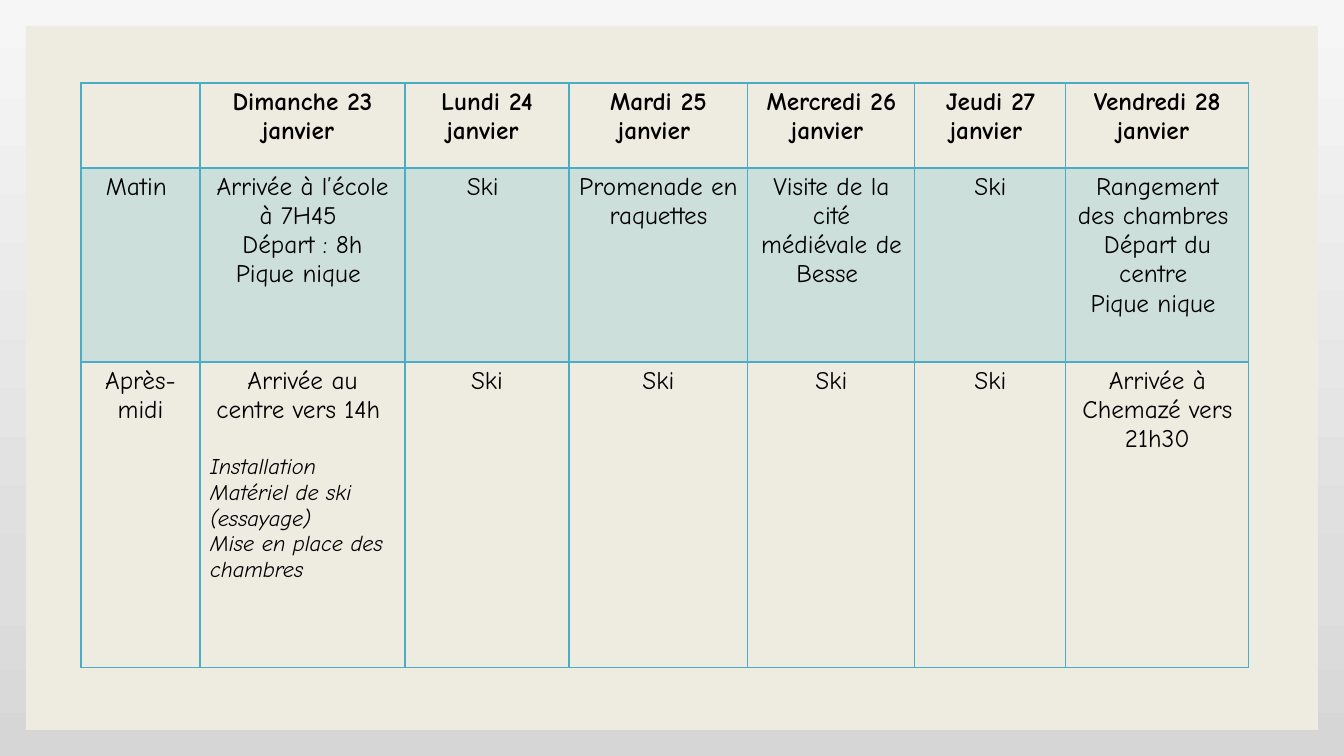
from copy import deepcopy
from dataclasses import dataclass

from lxml.etree import SubElement
from pptx import Presentation
from pptx.dml.color import RGBColor
from pptx.enum.shapes import MSO_SHAPE
from pptx.enum.text import PP_ALIGN
from pptx.oxml.ns import qn
from pptx.util import Emu, Pt

BLACK = RGBColor(0x00, 0x00, 0x00)
CREAM = RGBColor(0xEE, 0xEC, 0xE1)
TEAL = RGBColor(0x4B, 0xAC, 0xC6)
BACKDROP = [(0, RGBColor(0xF6, 0xF6, 0xF6)),
            (0.77, RGBColor(0xDE, 0xDE, 0xDE)),
            (1, RGBColor(0xD6, 0xD6, 0xD6))]
FONT = "Comic Neue"
COLUMNS = [119, 205, 164, 179, 167, 151, 183]
DAYS = ["Dimanche 23", "Lundi 24", "Mardi 25", "Mercredi 26", "Jeudi 27", "Vendredi 28"]


def px(n: int) -> Emu:
    return Emu(round(n * 914400 / 100.8))


@dataclass
class Entry:
    """The lines of one cell: centred text, then italic details."""
    lines: list[str]
    details: tuple[str, ...] = ()


@dataclass
class Row:
    height: int
    entries: list[Entry]
    bold: bool = False
    tinted: bool = False
    rule_below: int = 1


ROWS = [
    Row(85, [Entry([""])] + [Entry([f"{day} janvier "]) for day in DAYS],
        bold=True, rule_below=2),
    Row(194, [
        Entry(["Matin "]),
        Entry(["Arrivée à l’école à 7H45 ", "Départ : 8h", "Pique nique "]),
        Entry(["Ski "]),
        Entry(["Promenade en raquettes"]),
        Entry(["Visite de la cité médiévale de Besse "]),
        Entry(["Ski"]),
        Entry(["Rangement des chambres ", "Départ du centre ", "Pique nique "]),
    ], tinted=True),
    Row(306, [
        Entry(["Après-midi"]),
        Entry(["Arrivée au centre vers 14h "],
              ("Installation", "Matériel de ski (essayage)", "Mise en place des chambres")),
        *[Entry(["Ski"]) for _ in range(4)],
        Entry(["Arrivée à Chemazé vers 21h30"]),
    ]),
]


def set_backdrop(s) -> None:
    fill = s.background.fill
    fill.gradient()
    fill.gradient_angle = 270
    stops = s._element.find(".//" + qn("a:gsLst"))
    stops.insert(1, deepcopy(stops[0]))
    for stop, (position, color) in zip(fill.gradient_stops, BACKDROP):
        stop.position = position
        stop.color.rgb = color


def add_text(p, text: str, **formats) -> None:
    r = p.add_run()
    r.text = text
    r.font.color.rgb = BLACK
    for name, value in {"name": FONT, "size": Pt(18), "bold": False, **formats}.items():
        setattr(r.font, name, value)


def write_entry(tf, entry: Entry, bold: bool) -> None:
    for i, line in enumerate(entry.lines):
        p = tf.paragraphs[0] if i == 0 else tf.add_paragraph()
        p.alignment = PP_ALIGN.CENTER
        if line:
            add_text(p, line, bold=bold)
    for i, line in enumerate(entry.details):
        p = tf.add_paragraph()
        p.alignment = PP_ALIGN.LEFT
        p.space_before = Pt(0 if i else 21)
        add_text(p, line, size=Pt(16), italic=True)


def set_borders(cell, top: int, bottom: int) -> None:
    tcPr = cell._tc.get_or_add_tcPr()
    widths = {"a:lnL": 1, "a:lnR": 1, "a:lnT": top, "a:lnB": bottom}
    for i, (tag, width) in enumerate(widths.items()):
        ln = SubElement(tcPr, qn(tag), w=str(Pt(width)))
        SubElement(SubElement(ln, qn("a:solidFill")), qn("a:srgbClr"), val=str(TEAL))
        tcPr.insert(i, ln)


def set_fill(cell, tinted: bool) -> None:
    if not tinted:
        cell.fill.background()
        return
    cell.fill.solid()
    cell.fill.fore_color.rgb = TEAL
    color = cell._tc.tcPr.find(qn("a:solidFill"))[0]
    SubElement(color, qn("a:alpha"), val="20000")


def add_schedule(s) -> None:
    frame = s.shapes.add_table(len(ROWS), len(COLUMNS), px(81), px(83),
                               px(sum(COLUMNS)), px(sum(row.height for row in ROWS)))
    table = frame.table
    table.horz_banding = False
    table.first_row = False
    for column, width in zip(table.columns, COLUMNS):
        column.width = px(width)
    rule_above = 1
    for i, row in enumerate(ROWS):
        table.rows[i].height = px(row.height)
        for j, entry in enumerate(row.entries):
            cell = table.cell(i, j)
            set_fill(cell, row.tinted)
            set_borders(cell, rule_above, row.rule_below)
            write_entry(cell.text_frame, entry, row.bold)
        rule_above = row.rule_below


def main() -> None:
    prs = Presentation()
    prs.slide_width, prs.slide_height = px(1344), px(756)
    s = prs.slides.add_slide(prs.slide_layouts[6])
    set_backdrop(s)

    # Cream panel
    sp = s.shapes.add_shape(MSO_SHAPE.RECTANGLE, px(26), px(26), px(1292), px(704))
    sp.shadow.inherit = False
    sp.fill.solid()
    sp.fill.fore_color.rgb = CREAM
    sp.line.fill.background()

    # Week schedule
    add_schedule(s)
    prs.save("out.pptx")


if __name__ == "__main__":
    main()
